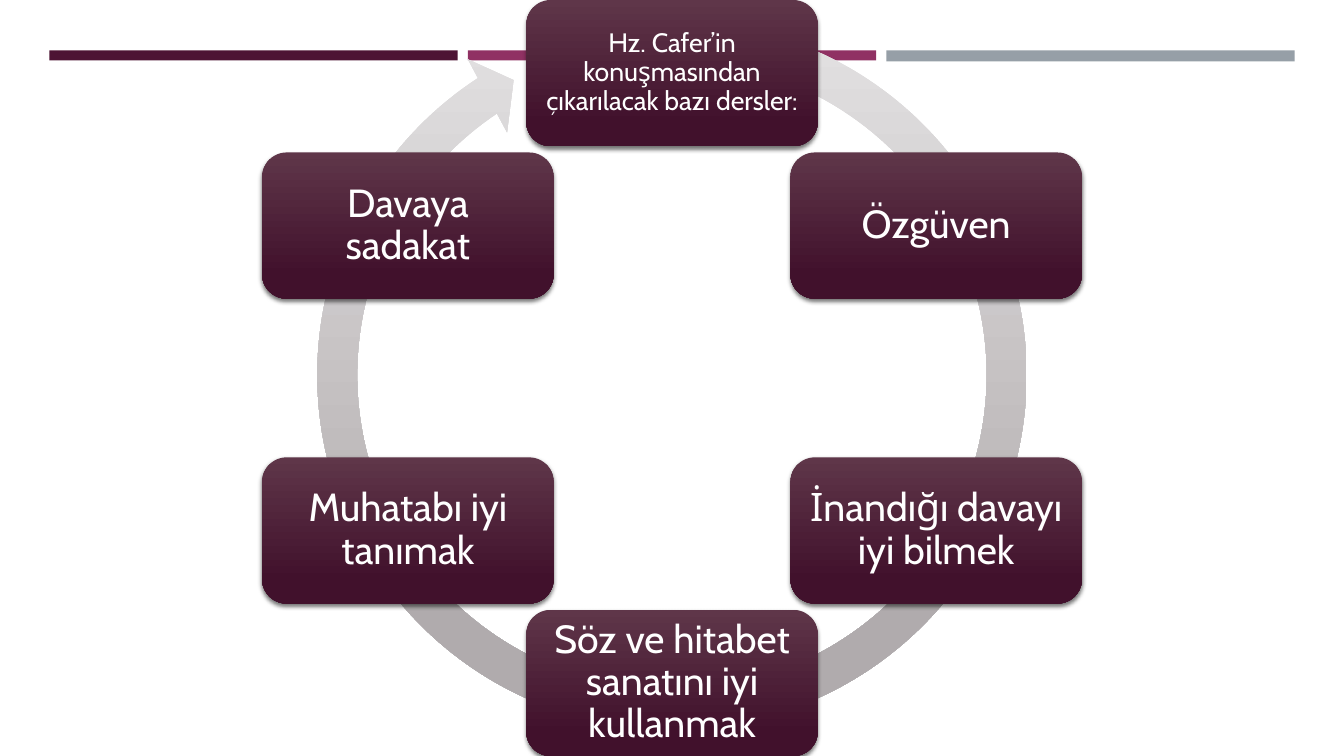
from math import cos, radians, sin

from lxml import etree
from pptx import Presentation
from pptx.dml.color import RGBColor
from pptx.enum.shapes import MSO_SHAPE
from pptx.enum.text import MSO_ANCHOR, PP_ALIGN
from pptx.oxml.ns import qn
from pptx.util import Inches, Pt

RECTANGLE = MSO_SHAPE.RECTANGLE
ROUNDED = MSO_SHAPE.ROUNDED_RECTANGLE
CIRCULAR_ARROW = MSO_SHAPE.CIRCULAR_ARROW
MIDDLE = MSO_ANCHOR.MIDDLE
CENTER = PP_ALIGN.CENTER

COLORS = {
    "plum": "4D1434", "magenta": "903163", "slate": "969FA7",
    "node_top": "5F3649", "node_bottom": "41112C",
    "ring_top": "E5E3E4", "ring_bottom": "B0ABAD",
    "text": "FFFFFF", "shadow": "000000",
}
FONT = "Cabin"
LESSONS = [
    ("Hz. Cafer’in konuşmasından çıkarılacak bazı dersler:", 19, 0.08),
    ("Özgüven", 28, 0.12),
    ("İnandığı davayı iyi bilmek", 28, 0.12),
    ("Söz ve hitabet sanatını iyi kullanmak", 28, 0.12),
    ("Muhatabı iyi tanımak", 28, 0.12),
    ("Davaya sadakat", 28, 0.12),
]


def color(name):
    """Return the named colour."""
    return RGBColor.from_string(COLORS[name])


def add_plain_shape(page, kind, left, top, width, height):
    """Add a preset shape without outline or theme shadow."""
    shape = page.shapes.add_shape(
        kind, Inches(left), Inches(top), Inches(width), Inches(height))
    shape.line.fill.background()
    shape.shadow.inherit = False
    return shape


def fill_downward(shape, top_color, bottom_color):
    """Fill a shape with a gradient running from top to bottom."""
    shape.fill.gradient()
    shape.fill.gradient_angle = 270
    stops = zip(shape.fill.gradient_stops, (top_color, bottom_color), (0, 0.84))
    for stop, name, position in stops:
        stop.color.rgb = color(name)
        stop.position = position


def add_soft_shadow(shape):
    """Give a shape a short shadow below it."""
    effects = shape.element.spPr.find(qn("a:effectLst"))
    shadow = etree.SubElement(
        effects, qn("a:outerShdw"), blurRad=str(Pt(3)), dist=str(Pt(2)),
        dir="5400000", algn="ctr", rotWithShape="0")
    tint = etree.SubElement(shadow, qn("a:srgbClr"), val=COLORS["shadow"])
    etree.SubElement(tint, qn("a:alpha"), val="55000")


def add_header_bars(page, left, top, width, gap):
    """Draw the three coloured bars across the top."""
    bars = [("plum", 0.1), ("magenta", 0.1), ("slate", 0.11)]
    for index, (name, height) in enumerate(bars):
        bar = add_plain_shape(
            page, RECTANGLE, left + index * (width + gap), top, width, height)
        bar.fill.solid()
        bar.fill.fore_color.rgb = color(name)


def add_node(page, left, top, width, height, text, size, margin):
    """Draw one lesson in a rounded box."""
    box = add_plain_shape(page, ROUNDED, left, top, width, height)
    fill_downward(box, "node_top", "node_bottom")
    add_soft_shadow(box)
    frame = box.text_frame
    frame.word_wrap = True
    frame.vertical_anchor = MIDDLE
    frame.margin_left = frame.margin_right = Inches(margin)
    frame.margin_top = frame.margin_bottom = Inches(margin)
    para = frame.paragraphs[0]
    para.text = text
    para.alignment = CENTER
    para.line_spacing = 0.9
    para.font.name = FONT
    para.font.size = Pt(size)
    para.font.color.rgb = color("text")


def add_lesson_cycle(page, left, top, width, height):
    """Draw the ring arrow and spread the lessons clockwise around it."""
    node_width, node_height, ring_size = 2.89, 1.45, 7.46
    center_x, center_y = left + width / 2, top + height / 2
    radius = (height - node_height) / 2
    ring = add_plain_shape(
        page, CIRCULAR_ARROW, center_x - ring_size / 2,
        center_y - ring_size / 2 - 0.03, ring_size, ring_size)
    for index, value in enumerate((0.053, 3.126, 141.931, 171.475, 0.055)):
        ring.adjustments[index] = value
    fill_downward(ring, "ring_top", "ring_bottom")
    for index, (text, size, margin) in enumerate(LESSONS):
        angle = radians(index * 360 / len(LESSONS))
        add_node(
            page, center_x + radius * sin(angle) - node_width / 2,
            center_y - radius * cos(angle) - node_height / 2,
            node_width, node_height, text, size, margin)


def main():
    """Build the slide and save it."""
    deck = Presentation()
    deck.slide_width, deck.slide_height = Inches(13.33), Inches(7.5)
    page = deck.slides.add_slide(deck.slide_layouts[6])
    add_header_bars(page, 0.49, 0.5, 4.05, 0.1)
    add_lesson_cycle(page, 2.6, 0, 8.13, 7.5)
    deck.save("out.pptx")


if __name__ == "__main__":
    main()
